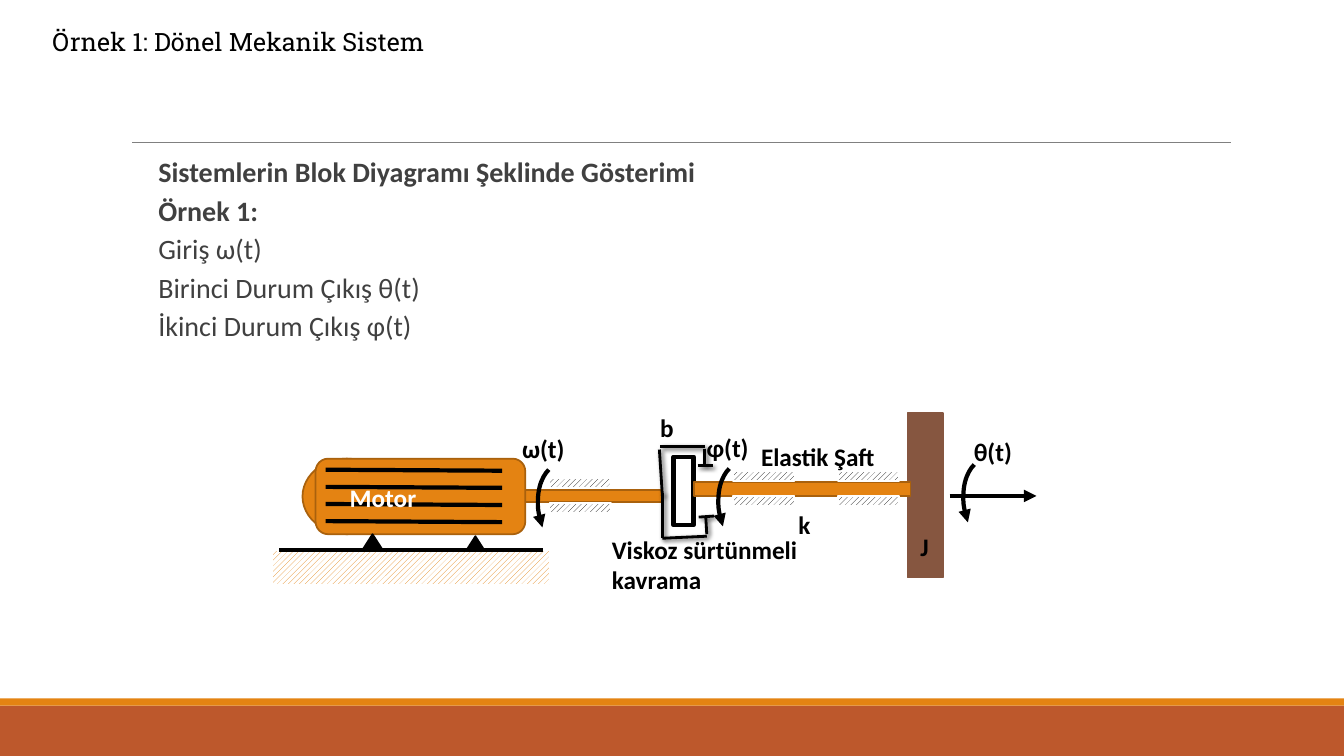
from lxml import etree
from pptx import Presentation
from pptx.dml.color import RGBColor
from pptx.enum.dml import MSO_PATTERN
from pptx.enum.shapes import MSO_CONNECTOR, MSO_SHAPE
from pptx.enum.text import MSO_ANCHOR, PP_ALIGN
from pptx.oxml.ns import qn
from pptx.util import Pt

PX = 9144
RECT, OVAL = MSO_SHAPE.RECTANGLE, MSO_SHAPE.OVAL
ROUND = MSO_SHAPE.FLOWCHART_ALTERNATE_PROCESS
WEDGE, ARC = MSO_SHAPE.ISOSCELES_TRIANGLE, MSO_SHAPE.ARC
HATCH = MSO_PATTERN.WIDE_UPWARD_DIAGONAL
STRAIGHT = MSO_CONNECTOR.STRAIGHT
LEFT, TOP = PP_ALIGN.LEFT, MSO_ANCHOR.TOP
color = RGBColor.from_string
ORANGE, EDGE, BLACK, WHITE = "E48312", "A9610D", "000000", "FFFFFF"

deck = Presentation()
deck.slide_width, deck.slide_height = 1333 * PX, 750 * PX
slide = deck.slides.add_slide(deck.slide_layouts[5])
shapes = slide.shapes


def box(kind, place, fill, edge=None, width=1.25, hatch=False):
    shape = shapes.add_shape(kind, *[v * PX for v in place])
    shape.shadow.inherit = False
    if hatch:
        shape.fill.patterned()
        shape.fill.pattern = HATCH
        shape.fill.fore_color.rgb = color(fill)
        shape.fill.back_color.rgb = color(WHITE)
    elif fill:
        shape.fill.solid()
        shape.fill.fore_color.rgb = color(fill)
    else:
        shape.fill.background()
    if edge:
        shape.line.color.rgb = color(edge)
        shape.line.width = Pt(width)
    else:
        shape.line.fill.background()
    return shape


def line(ends, width, tone=BLACK, shade=False):
    rule = shapes.add_connector(STRAIGHT, *[v * PX for v in ends])
    rule.line.color.rgb = color(tone)
    rule.line.width = Pt(width)
    effect = etree.SubElement(rule._element.spPr, qn("a:effectLst"))
    if shade:
        outer = etree.SubElement(effect, qn("a:outerShdw"), blurRad=str(Pt(3)),
                                 dist=str(Pt(2)), dir="2700000", rotWithShape="0")
        tint = etree.SubElement(outer, qn("a:srgbClr"), val=BLACK)
        etree.SubElement(tint, qn("a:alpha"), val="60000")
    return rule


box(RECT, (0, 700, 1333, 50), "BD582C")
box(RECT, (0, 693, 1333, 7), ORANGE)
line((131, 141, 1221, 141), 0.5, "808080")

title = shapes.title
title.left, title.top, title.width, title.height = [v * PX for v in (42, 21, 623, 40)]
title.text_frame.text = "Örnek 1: Dönel Mekanik Sistem"
title.text_frame.vertical_anchor = TOP
head = title.text_frame.paragraphs[0]
head.alignment = LEFT
head.font.name, head.font.size = "Roboto Slab", Pt(18)
head.font.color.rgb = color(BLACK)

body = shapes.add_textbox(137 * PX, 152 * PX, 725 * PX, 253 * PX).text_frame
body.word_wrap = True
body.margin_left, body.margin_right = 20 * PX, 0
body.text = "\n".join([
    "Sistemlerin Blok Diyagramı Şeklinde Gösterimi",
    "Örnek 1:",
    "Giriş ω(t)",
    "Birinci Durum Çıkış θ(t)",
    "İkinci Durum Çıkış φ(t)",
])
for i, para in enumerate(body.paragraphs):
    para.line_spacing = 0.9
    para.space_before, para.space_after = Pt(4), Pt(2)
    para.font.name, para.font.size, para.font.bold = "Calibri", Pt(20), i < 2
    para.font.color.rgb = color("404040")

box(RECT, (494, 486, 163, 12), ORANGE, EDGE)
box(OVAL, (300, 455, 88, 75), ORANGE, EDGE)
box(ROUND, (313, 455, 208, 75), ORANGE, EDGE)
for i in range(4):
    y = 466 + 17 * i
    line((323, y, 498, y + 1), 3)
for x, y in [(347, 530), (449, 532)]:
    box(WEDGE, (x, y, 45, 35), BLACK, BLACK)
box(RECT, (270, 546, 275, 34), ORANGE, WHITE, hatch=True)
line((277, 546, 539, 546), 3)

box(RECT, (900, 410, 35, 163), "865640", "865640")
for ends in [
    (657, 492, 654, 446), (655, 443, 699, 443),
    (699, 445, 699, 462), (692, 462, 707, 462),
    (657, 489, 657, 534), (657, 534, 701, 532),
    (701, 530, 700, 513), (693, 513, 708, 512),
]:
    line(ends, 2, shade=True)
box(RECT, (668, 453, 20, 68), WHITE, BLACK, 3)
box(RECT, (688, 478, 215, 14), ORANGE, EDGE)
for x, y in [(545, 474), (727, 467), (831, 467)]:
    for gap in (0, 25):
        box(RECT, (x, y + gap, 61, 10), BLACK, WHITE, hatch=True)

arrows = [line((942, 492, 1028, 492), 3)]
for x, y in [(536, 457), (715, 456), (958, 452)]:
    turn = box(ARC, (x, y, 71, 109), None, BLACK, 3)
    turn.adjustments[0], turn.adjustments[1] = 168.94, 0
    turn.rotation = 340.7
    turn._element.spPr.find(qn("a:xfrm")).set("flipH", "1")
    arrows.append(turn)
for arrow in arrows:
    stroke = arrow._element.spPr.find(qn("a:ln"))
    etree.SubElement(stroke, qn("a:tailEnd"), type="triangle")

for text, x, y, w, h, tone in [
    ("ω(t)", 508, 425, 73, 40, BLACK),
    ("θ(t)", 956, 428, 73, 40, BLACK),
    ("J", 903, 522, 73, 40, BLACK),
    ("b", 645, 404, 73, 40, BLACK),
    ("Motor", 337, 474, 187, 40, WHITE),
    ("φ(t)", 691, 424, 73, 40, BLACK),
    ("Viskoz sürtünmeli\nkavrama", 597, 525, 210, 71, BLACK),
    ("Elastik Şaft", 745, 433, 210, 40, BLACK),
    ("k", 782, 500, 73, 40, BLACK),
]:
    label = shapes.add_textbox(x * PX, y * PX, w * PX, h * PX).text_frame
    label.word_wrap = True
    label.text = text
    for para in label.paragraphs:
        para.font.name, para.font.size, para.font.bold = "Calibri", Pt(18), True
        para.font.color.rgb = color(tone)

deck.save("out.pptx")
